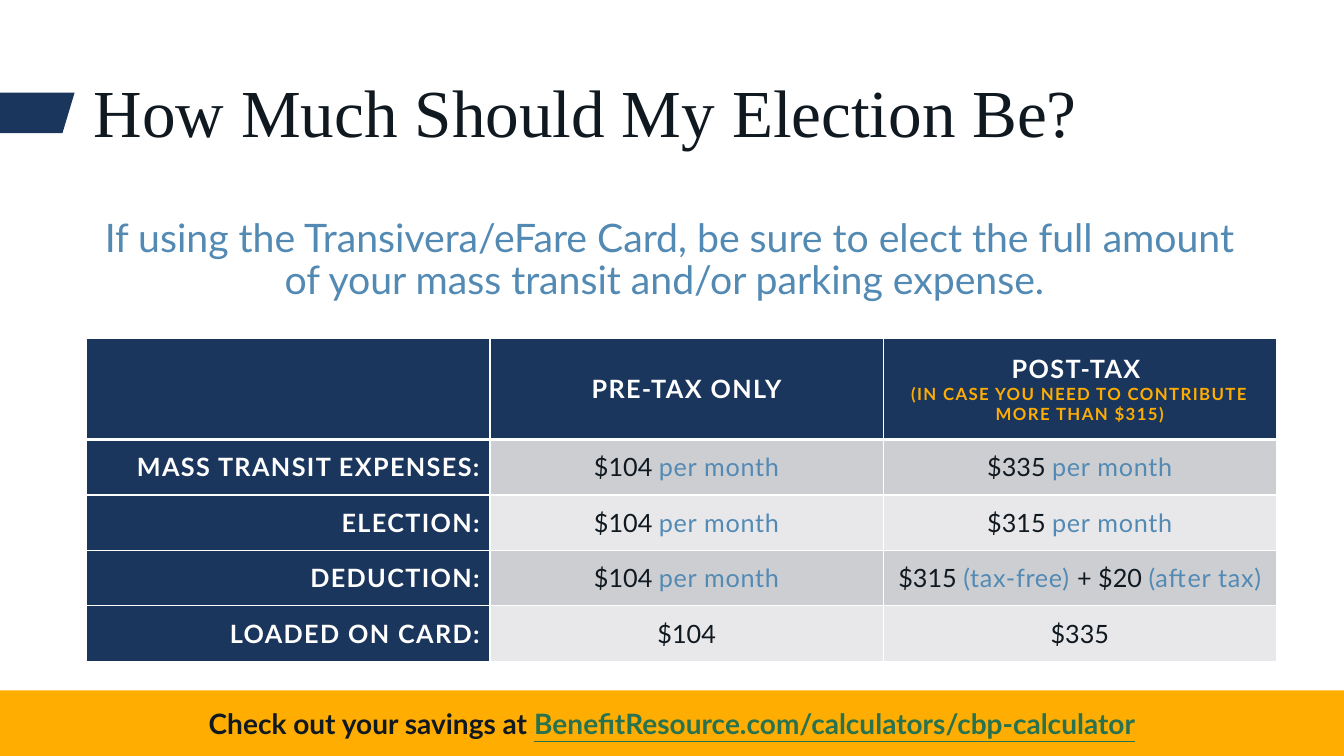
"""Build the election slide: title, lead text, tax table and savings banner."""
from dataclasses import dataclass

from lxml.etree import SubElement
from pptx import Presentation
from pptx.dml.color import RGBColor
from pptx.enum.shapes import MSO_SHAPE
from pptx.enum.text import MSO_ANCHOR, MSO_AUTO_SIZE, PP_ALIGN
from pptx.oxml.ns import qn
from pptx.util import Pt

TITLE = "How Much Should My Election Be?"
LEAD = [("If using the Transivera/eFare Card, be sure to elect the full amount "
         "of your mass transit and/or parking expense. ", "lead")]
BANNER = [("Check out your savings at ", "call"),
          ("BenefitResource.com/calculators/cbp-calculator", "link")]
HEADS = [
    [],
    [[("PRE-TAX ONLY", "head")]],
    [[("POST-TAX ", "head")],
     [("(IN CASE YOU NEED TO CONTRIBUTE MORE THAN $315)", "hint")]],
]
MONTH = ("per month", "unit")
ROWS = [
    ("MASS TRANSIT EXPENSES:", [("$104 ", "sum"), MONTH], [("$335 ", "sum"), MONTH]),
    ("ELECTION:", [("$104 ", "sum"), MONTH], [("$315 ", "sum"), MONTH]),
    ("DEDUCTION:", [("$104 ", "sum"), MONTH],
     [("$315 ", "sum"), ("(tax-free) ", "unit"),
      ("+ $20 ", "sum"), ("(after tax)", "unit")]),
    ("LOADED ON CARD:", [("$104", "sum")], [("$335", "sum")]),
]

SCALE = 9144
WIDE, HIGH = 1333, 750
COLS = [400, 390, 390]
TALLS = [100] + [55] * len(ROWS)
FLAG = [(0, 92), (74, 92), (62, 132), (0, 132)]


@dataclass(frozen=True)
class Style:
    size: int
    color: str
    bold: bool = False
    space: int = 0
    line: bool = False
    face: str = "Lato"


@dataclass(frozen=True)
class Theme:
    navy: str = "1B365D"
    gold: str = "FFAD00"
    blue: str = "538AB4"
    ink: str = "101820"
    white: str = "FFFFFF"
    green: str = "28724F"
    bands: tuple = ("CDCED2", "E8E8EA")

    def style(self, name):
        return {
            "title": Style(48, self.ink, face="Times New Roman"),
            "lead": Style(28, self.blue),
            "head": Style(18, self.white, True, 100),
            "hint": Style(12, self.gold, True, 100),
            "sum": Style(18, self.ink),
            "unit": Style(18, self.blue, space=50),
            "call": Style(20, self.ink, True),
            "link": Style(20, self.green, True, line=True),
        }[name]


THEME = Theme()


def px(*nums):
    return [num * SCALE for num in nums]


def paint(item, color):
    item.fill.solid()
    item.fill.fore_color.rgb = RGBColor.from_string(color)


def dress(run, name):
    look = THEME.style(name)
    font = run.font
    font.name, font.size, font.bold = look.face, Pt(look.size), look.bold
    font.color.rgb = RGBColor.from_string(look.color)
    if look.line:
        font.underline = True
    if look.space:
        run._r.get_or_add_rPr().set("spc", str(look.space))


def write(frame, paras, align):
    for num, parts in enumerate(paras):
        para = frame.add_paragraph() if num else frame.paragraphs[0]
        para.alignment = align
        for text, name in parts:
            run = para.add_run()
            run.text = text
            dress(run, name)


def edge(cell, base):
    props = cell._tc.get_or_add_tcPr()
    for side, size in (("L", 1), ("R", 1), ("T", 1), ("B", base)):
        line = SubElement(props, qn(f"a:ln{side}"), w=str(Pt(size)))
        fill = SubElement(line, qn("a:solidFill"))
        SubElement(fill, qn("a:srgbClr"), val=THEME.white)


def flat(shape, color):
    paint(shape, color)
    shape.line.fill.background()
    shape.shadow.inherit = False


def add_title(slide):
    head = slide.shapes.title
    head.left, head.top, head.width, head.height = px(83, 81, 1250, 67)
    frame = head.text_frame
    frame.text = TITLE
    frame.auto_size = MSO_AUTO_SIZE.NONE
    frame.vertical_anchor = MSO_ANCHOR.MIDDLE
    para = frame.paragraphs[0]
    para.alignment, para.line_spacing = PP_ALIGN.LEFT, 0.9
    dress(para.runs[0], "title")


def add_flag(slide):
    form = slide.shapes.build_freeform(*FLAG[0], scale=SCALE)
    form.add_line_segments(FLAG[1:], close=True)
    flat(form.convert_to_shape(), THEME.navy)


def add_grid(slide):
    grid = slide.shapes.add_table(len(TALLS), len(COLS),
                                  *px(86, 336, sum(COLS), sum(TALLS))).table
    for col, wide in zip(grid.columns, px(*COLS)):
        col.width = wide
    for row, tall in zip(grid.rows, px(*TALLS)):
        row.height = tall
    body = [[[[(name, "head")]], [pre], [post]] for name, pre, post in ROWS]
    for y, row in enumerate([HEADS] + body):
        for x, paras in enumerate(row):
            cell = grid.cell(y, x)
            edge(cell, 1 if y else 3)
            paint(cell, THEME.bands[(y - 1) % 2] if x and y else THEME.navy)
            cell.vertical_anchor = MSO_ANCHOR.MIDDLE
            write(cell.text_frame, paras,
                  PP_ALIGN.CENTER if x else PP_ALIGN.RIGHT)


def add_lead(slide):
    frame = slide.shapes.add_textbox(*px(80, 212, 1168, 151)).text_frame
    frame.word_wrap = True
    write(frame, [LEAD], PP_ALIGN.CENTER)
    frame.paragraphs[0].line_spacing = 0.9


def add_banner(slide):
    bar = slide.shapes.add_shape(MSO_SHAPE.RECTANGLE, *px(0, 685, WIDE, 65))
    flat(bar, THEME.gold)
    frame = bar.text_frame
    frame.word_wrap = True
    frame.vertical_anchor = MSO_ANCHOR.MIDDLE
    frame.margin_left, frame.margin_right = px(50, 50)
    write(frame, [BANNER], PP_ALIGN.CENTER)


def main():
    deck = Presentation()
    deck.slide_width, deck.slide_height = px(WIDE, HIGH)
    slide = deck.slides.add_slide(deck.slide_layouts[5])
    for part in (add_flag, add_grid, add_banner, add_lead, add_title):
        part(slide)
    deck.save("out.pptx")


if __name__ == "__main__":
    main()
